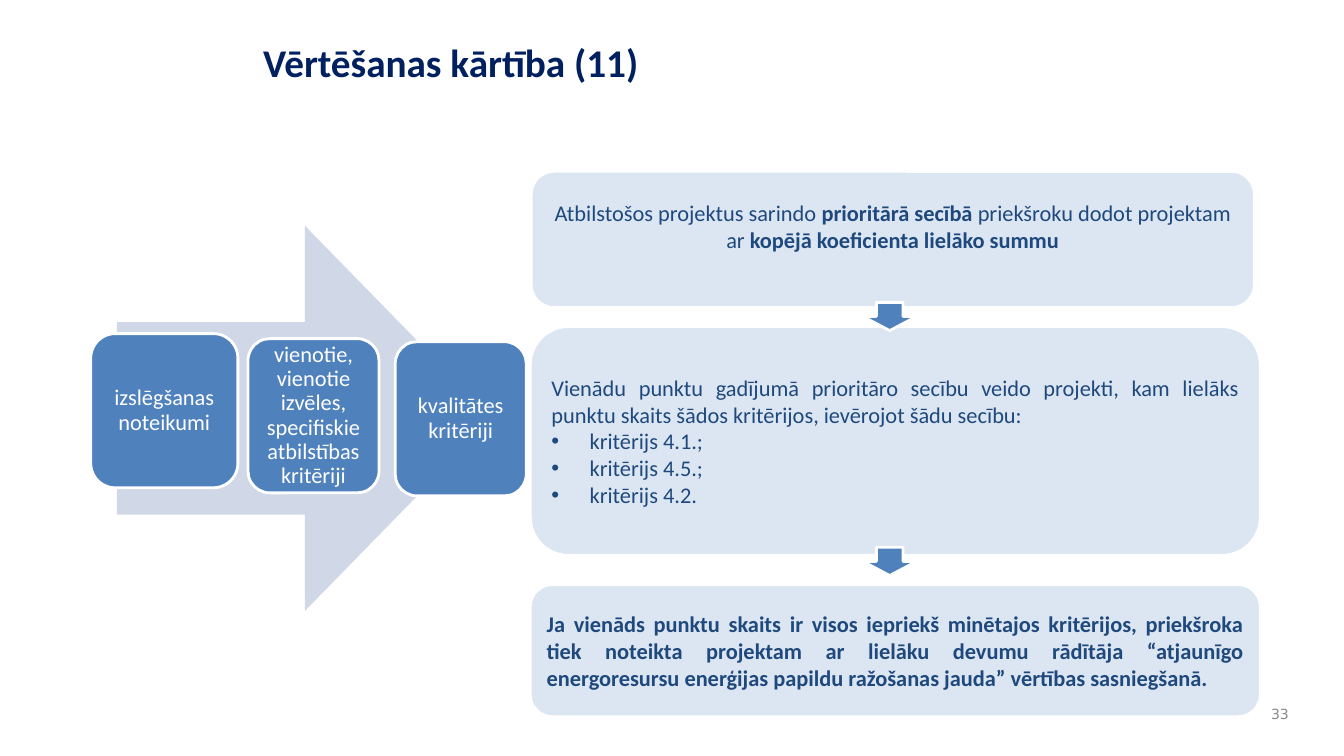
from lxml.etree import SubElement
from pptx import Presentation
from pptx.dml.color import RGBColor
from pptx.enum.shapes import MSO_SHAPE
from pptx.enum.text import MSO_ANCHOR, PP_ALIGN
from pptx.oxml.ns import qn
from pptx.util import Inches, Pt

BLUE, PALE, NAVY, WHITE = "4F81BD", "DCE6F2", "1F497D", "FFFFFF"

STEPS = [
    ((0.9, 3.31, 1.46, 1.53), "izslēgšanas noteikumi"),
    ((2.46, 3.36, 1.3, 1.53),
     "vienotie, vienotie izvēles, specifiskie atbilstības kritēriji"),
    ((3.92, 3.39, 1.3, 1.53), "kvalitātes kritēriji"),
]
RANKING = [
    ("Atbilstošos projektus sarindo\u00a0", False),
    ("prioritārā secībā ", True),
    ("priekšroku dodot projektam ar ", False),
    ("kopējā koeficienta lielāko summu", True),
]
TIE_RULE = ("Vienādu punktu gadījumā prioritāro secību veido projekti, kam lielāks "
            "punktu skaits šādos kritērijos, ievērojot šādu secību:")
TIE_CRITERIA = ["kritērijs 4.1.;", "kritērijs 4.5.;", "kritērijs 4.2."]
LAST_RULE = ("Ja vienāds punktu skaits ir visos iepriekš minētajos kritērijos, "
             "priekšroka tiek noteikta projektam ar lielāku devumu rādītāja "
             "“atjaunīgo energoresursu enerģijas papildu ražošanas jauda” "
             "vērtības sasniegšanā.")


def rgb(color):
    return RGBColor.from_string(color)


def place(shape, box):
    shape.left, shape.top, shape.width, shape.height = map(Inches, box)


def style_font(font, size, color, bold=False, name="Calibri"):
    font.name, font.size, font.bold = name, Pt(size), bold
    font.color.rgb = rgb(color)


def add_block(slide, kind, box, fill, outlined=True):
    shape = slide.shapes.add_shape(kind, *map(Inches, box))
    shape.shadow.inherit = False
    shape.fill.solid()
    shape.fill.fore_color.rgb = rgb(fill)
    if outlined:
        shape.line.color.rgb = rgb(WHITE)
        shape.line.width = Pt(2)
    else:
        shape.line.fill.background()
    return shape


def add_step(slide, box, text):
    frame = add_block(slide, MSO_SHAPE.ROUNDED_RECTANGLE, box, BLUE).text_frame
    frame.margin_left = frame.margin_right = Inches(0.07)
    frame.margin_top = frame.margin_bottom = Inches(0.07)
    write(frame.paragraphs[0], [(text, False)], PP_ALIGN.CENTER, WHITE)
    frame.paragraphs[0].line_spacing = 0.9


def add_panel(slide, box):
    """Add a pale rounded panel and return its text frame."""
    frame = add_block(slide, MSO_SHAPE.ROUNDED_RECTANGLE, box, PALE).text_frame
    frame.vertical_anchor = MSO_ANCHOR.MIDDLE
    return frame


def write(paragraph, pieces, alignment, color=NAVY):
    paragraph.alignment = alignment
    for text, bold in pieces:
        run = paragraph.add_run()
        run.text = text
        style_font(run.font, 16, color, bold)


def add_bullet(paragraph):
    properties = paragraph._p.get_or_add_pPr()
    properties.set("marL", str(Inches(0.38)))
    properties.set("indent", str(-Inches(0.38)))
    SubElement(properties, qn("a:buFont"), typeface="Arial")
    SubElement(properties, qn("a:buChar"), char="•")


def add_title(slide, text):
    title = slide.shapes.title
    place(title, (2.51, 0.33, 10.16, 1.17))
    frame = title.text_frame
    frame.text = text
    frame.vertical_anchor = MSO_ANCHOR.TOP
    frame.paragraphs[0].alignment = PP_ALIGN.LEFT
    style_font(frame.paragraphs[0].runs[0].font, 28, "002060", True)


def add_page_number(slide, text):
    box = slide.shapes.add_textbox(*map(Inches, (12.44, 6.92, 0.44, 0.33)))
    frame = box.text_frame
    frame.word_wrap = True
    frame.vertical_anchor = MSO_ANCHOR.MIDDLE
    frame.text = text
    frame.paragraphs[0].alignment = PP_ALIGN.RIGHT
    style_font(frame.paragraphs[0].runs[0].font, 10, "898989", name="DejaVu Sans")


def main():
    presentation = Presentation()
    presentation.slide_width = Inches(13.33)
    presentation.slide_height = Inches(7.5)
    slide = presentation.slides.add_slide(presentation.slide_layouts[5])

    add_block(slide, MSO_SHAPE.RIGHT_ARROW, (1.16, 2.24, 3.73, 3.82), "D0D8E8", False)
    for box, text in STEPS:
        add_step(slide, box, text)
    add_page_number(slide, "33")
    add_title(slide, "Vērtēšanas kārtība (11)")

    ranking = add_panel(slide, (5.27, 1.7, 7.17, 1.35))
    ranking.margin_bottom = Inches(0.32)
    write(ranking.paragraphs[0], RANKING, PP_ALIGN.CENTER)

    ties = add_panel(slide, (5.26, 3.24, 7.24, 2.27))
    write(ties.paragraphs[0], [(TIE_RULE, False)], PP_ALIGN.JUSTIFY)
    for criterion in TIE_CRITERIA:
        paragraph = ties.add_paragraph()
        add_bullet(paragraph)
        write(paragraph, [(criterion, False)], PP_ALIGN.JUSTIFY)

    for top in (3, 5.43):
        add_block(slide, MSO_SHAPE.DOWN_ARROW, (8.56, top, 0.53, 0.28), BLUE)

    last = add_panel(slide, (5.26, 5.8, 7.24, 1.31))
    write(last.paragraphs[0], [(LAST_RULE, True)], PP_ALIGN.JUSTIFY)

    presentation.save("out.pptx")


if __name__ == "__main__":
    main()
